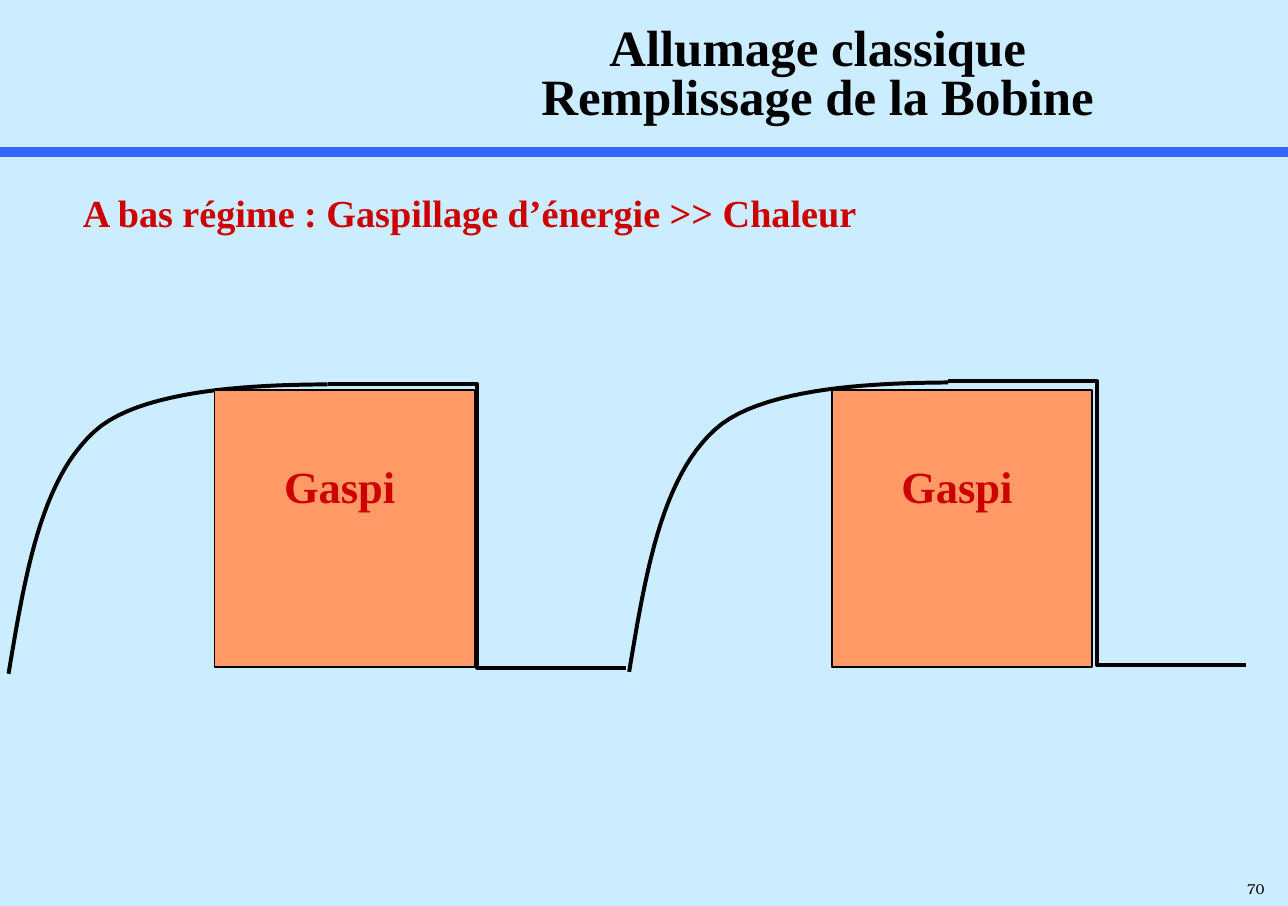
from dataclasses import dataclass

from lxml import etree
from pptx import Presentation
from pptx import util as u
from pptx.dml.color import RGBColor
from pptx.enum import shapes, text
from pptx.oxml.ns import qn
from pptx.shapes.connector import Connector
from pptx.slide import Slide

PX = 3810
SLIDE_WIDTH, SLIDE_HEIGHT = 2700, 1900
RULE_TOP = 319
COLORS = {
    "background": "CCECFF",
    "rule": "3366FF",
    "ink": "000000",
    "waste": "FF9966",
    "accent": "CC0000",
}
SERIF = "Times New Roman"
CHARGE_CURVE = (
    ((0, 0), (34, -204), (67, -406), (180, -508)),
    ((180, -508), (290, -610), (595, -605), (669, -607)),
)
CURVE_STEPS = 24
PULSE_WIDTH, PULSE_HEIGHT = 625, 595
WASTE_TOP, WASTE_WIDTH, WASTE_HEIGHT = 818, 545, 581


@dataclass(frozen=True)
class Label:
    wording: str
    left: int
    top: int
    width: int
    height: int
    size: int
    color: str = "accent"
    font: str = SERIF
    bold: bool = True
    align: text.PP_ALIGN = text.PP_ALIGN.CENTER
    anchor: text.MSO_ANCHOR = text.MSO_ANCHOR.TOP
    line_spacing: float = 1.0
    wrap: bool = True


@dataclass(frozen=True)
class Cycle:
    curve_left: int
    curve_bottom: int
    pulse_left: int
    pulse_top: int
    waste_left: int


CYCLES = (
    Cycle(18, 1413, 688, 805, 450),
    Cycle(1319, 1409, 1987, 799, 1744),
)
LABELS = (
    Label("Allumage classique\nRemplissage de la Bobine", 731, 43, 1968, 235, 32,
          color="ink", anchor=text.MSO_ANCHOR.MIDDLE, line_spacing=0.8),
    Label("70", 2590, 1835, 113, 67, 9, color="ink", font="TeX Gyre Bonum",
          bold=False, align=text.PP_ALIGN.LEFT,
          anchor=text.MSO_ANCHOR.MIDDLE, line_spacing=0.75, wrap=False),
    Label("A bas régime : Gaspillage d’énergie >> Chaleur", 150, 386, 2326, 120, 24,
          align=text.PP_ALIGN.LEFT),
    *(Label("Gaspi", cycle.waste_left + 112, 950, 300, 137, 28) for cycle in CYCLES),
)


def px(length: float) -> int:
    return round(length * PX)


def rgb(name: str) -> RGBColor:
    return RGBColor.from_string(COLORS[name])


def draw_connector(slide: Slide, kind: shapes.MSO_CONNECTOR, left: int, top: int,
                   right: int, bottom: int, color: str, weight: float) -> Connector:
    connector = slide.shapes.add_connector(kind, px(left), px(top), px(right), px(bottom))
    connector.line.color.rgb = rgb(color)
    connector.line.width = u.Pt(weight)
    etree.SubElement(connector._element.spPr, qn("a:effectLst"))
    return connector


def curve_points(cycle: Cycle) -> list[tuple[int, int]]:
    points = []
    for segment in CHARGE_CURVE:
        for step in range(CURVE_STEPS + 1):
            t = step / CURVE_STEPS
            weights = ((1 - t) ** 3, 3 * t * (1 - t) ** 2, 3 * t ** 2 * (1 - t), t ** 3)
            x = sum(w * point[0] for w, point in zip(weights, segment))
            y = sum(w * point[1] for w, point in zip(weights, segment))
            points.append((px(cycle.curve_left + x), px(cycle.curve_bottom + y)))
    return points


def draw_signal(slide: Slide, cycle: Cycle) -> None:
    start, *rest = curve_points(cycle)
    builder = slide.shapes.build_freeform(*start)
    builder.add_line_segments(rest, close=False)
    charge = builder.convert_to_shape()
    charge.shadow.inherit = False
    charge.fill.background()
    charge.line.color.rgb = rgb("ink")
    charge.line.width = u.Pt(2.5)
    draw_connector(slide, shapes.MSO_CONNECTOR.ELBOW, cycle.pulse_left, cycle.pulse_top,
                   cycle.pulse_left + PULSE_WIDTH, cycle.pulse_top + PULSE_HEIGHT,
                   "ink", 2.5)


def draw_waste(slide: Slide, cycle: Cycle) -> None:
    waste = slide.shapes.add_shape(
        shapes.MSO_SHAPE.RECTANGLE, px(cycle.waste_left), px(WASTE_TOP),
        px(WASTE_WIDTH), px(WASTE_HEIGHT))
    waste.shadow.inherit = False
    waste.fill.solid()
    waste.fill.fore_color.rgb = rgb("waste")
    waste.line.color.rgb = rgb("ink")
    waste.line.width = u.Pt(1)


def draw_label(slide: Slide, label: Label) -> None:
    frame = slide.shapes.add_textbox(
        px(label.left), px(label.top), px(label.width), px(label.height)).text_frame
    frame.word_wrap = label.wrap
    frame.vertical_anchor = label.anchor
    paragraph = frame.paragraphs[0]
    paragraph.text = label.wording
    paragraph.alignment = label.align
    paragraph.line_spacing = label.line_spacing
    paragraph.font.name = label.font
    paragraph.font.size = u.Pt(label.size)
    paragraph.font.bold = label.bold
    paragraph.font.color.rgb = rgb(label.color)


def main() -> None:
    presentation = Presentation()
    presentation.slide_width = px(SLIDE_WIDTH)
    presentation.slide_height = px(SLIDE_HEIGHT)
    slide = presentation.slides.add_slide(presentation.slide_layouts[6])
    slide.background.fill.solid()
    slide.background.fill.fore_color.rgb = rgb("background")
    draw_connector(slide, shapes.MSO_CONNECTOR.STRAIGHT, 0, RULE_TOP,
                   SLIDE_WIDTH, RULE_TOP, "rule", 6)
    for cycle in CYCLES:
        draw_signal(slide, cycle)
    for cycle in CYCLES:
        draw_waste(slide, cycle)
    for label in LABELS:
        draw_label(slide, label)
    presentation.save("out.pptx")


if __name__ == "__main__":
    main()
